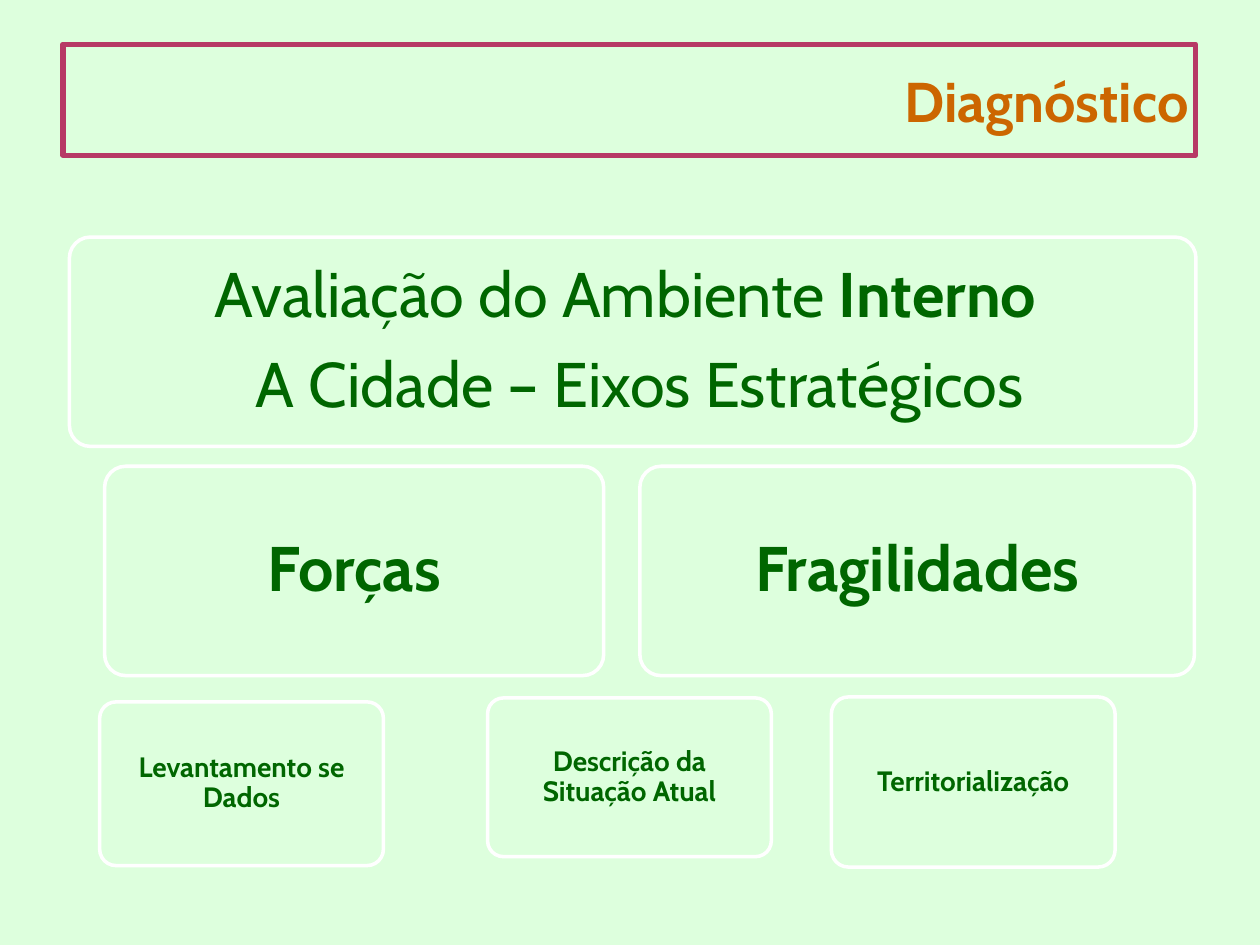
from dataclasses import dataclass

from pptx import Presentation
from pptx.dml.color import RGBColor
from pptx.enum.shapes import MSO_SHAPE
from pptx.enum.text import MSO_ANCHOR, MSO_AUTO_SIZE, PP_ALIGN
from pptx.util import Cm, Pt


@dataclass(frozen=True)
class Theme:
    font: str = "Cabin"
    background: RGBColor = RGBColor(0xDD, 0xFF, 0xDD)
    title_text: RGBColor = RGBColor(0xCC, 0x66, 0x00)
    title_line: RGBColor = RGBColor(0xB7, 0x39, 0x65)
    box_text: RGBColor = RGBColor(0x00, 0x66, 0x00)
    box_line: RGBColor = RGBColor(0xFF, 0xFF, 0xFF)
    title_size: int = 32
    large_size: int = 36
    small_size: int = 16


@dataclass(frozen=True)
class Run:
    text: str
    bold: bool = True


@dataclass(frozen=True)
class Box:
    left: float
    top: float
    width: float
    height: float
    size: int
    inset: float
    paragraphs: list[list[Run]]


THEME = Theme()
ROW_HEIGHT = 4.22
MIDDLE_TOP = 9.4
SMALL_WIDTH = 5.72
LARGE = {"size": THEME.large_size, "inset": 0.39}
SMALL = {"size": THEME.small_size, "inset": 0.19}

BOXES = [
    # Heading
    Box(1.4, 4.78, 22.71, ROW_HEIGHT, **LARGE, paragraphs=[
        [Run("Avaliação do Ambiente ", False), Run("Interno ")],
        [Run(" A Cidade – Eixos Estratégicos", False)],
    ]),
    # Strengths and weaknesses
    Box(2.11, MIDDLE_TOP, 10.06, ROW_HEIGHT, **LARGE, paragraphs=[[Run("Forças")]]),
    Box(12.9, MIDDLE_TOP, 11.18, ROW_HEIGHT, **LARGE, paragraphs=[[Run("Fragilidades")]]),
    # Steps
    Box(2.01, 14.15, SMALL_WIDTH, 3.3, **SMALL, paragraphs=[[Run("Levantamento se Dados")]]),
    Box(9.83, 14.07, SMALL_WIDTH, 3.2, **SMALL, paragraphs=[[Run("Descrição da Situação Atual")]]),
    Box(16.76, 14.05, SMALL_WIDTH, 3.43, **SMALL, paragraphs=[[Run("Territorialização")]]),
]


def apply_format(target, values: dict) -> None:
    for name, value in values.items():
        setattr(target, name, value)


def format_frame(frame, horizontal: float, vertical: float) -> None:
    apply_format(frame, {
        "word_wrap": True,
        "auto_size": MSO_AUTO_SIZE.NONE,
        "vertical_anchor": MSO_ANCHOR.MIDDLE,
        "margin_left": Cm(horizontal), "margin_right": Cm(horizontal),
        "margin_top": Cm(vertical), "margin_bottom": Cm(vertical),
    })


def format_font(font, size: int, color: RGBColor, bold: bool) -> None:
    apply_format(font, {"name": THEME.font, "size": Pt(size), "bold": bold})
    font.color.rgb = color


def draw_title(slide, text: str) -> None:
    title = slide.shapes.title
    apply_format(title, {
        "left": Cm(1.27), "top": Cm(0.89), "width": Cm(22.83), "height": Cm(2.24),
    })
    title.line.color.rgb = THEME.title_line
    title.line.width = Pt(3)
    format_frame(title.text_frame, 0.13, 0)
    paragraph = title.text_frame.paragraphs[0]
    paragraph.alignment = PP_ALIGN.RIGHT
    run = paragraph.add_run()
    run.text = text
    format_font(run.font, THEME.title_size, THEME.title_text, True)


def draw_box(slide, box: Box) -> None:
    shape = slide.shapes.add_shape(
        MSO_SHAPE.ROUNDED_RECTANGLE,
        Cm(box.left), Cm(box.top), Cm(box.width), Cm(box.height))
    shape.adjustments[0] = 0.1
    shape.shadow.inherit = False
    shape.fill.background()
    shape.line.color.rgb = THEME.box_line
    shape.line.width = Pt(2)
    frame = shape.text_frame
    format_frame(frame, box.inset, box.inset)
    for index, runs in enumerate(box.paragraphs):
        paragraph = frame.add_paragraph() if index else frame.paragraphs[0]
        apply_format(paragraph, {
            "alignment": PP_ALIGN.CENTER,
            "line_spacing": 0.9,
            "space_after": Pt(0.35 * box.size),
        })
        for part in runs:
            run = paragraph.add_run()
            run.text = part.text
            format_font(run.font, box.size, THEME.box_text, part.bold)


def main() -> None:
    presentation = Presentation()
    presentation.slide_width = Cm(25.4)
    presentation.slide_height = Cm(19.05)
    slide = presentation.slides.add_slide(presentation.slide_layouts[5])
    slide.background.fill.solid()
    slide.background.fill.fore_color.rgb = THEME.background

    draw_title(slide, "Diagnóstico")
    for box in BOXES:
        draw_box(slide, box)

    presentation.save("out.pptx")


if __name__ == "__main__":
    main()
